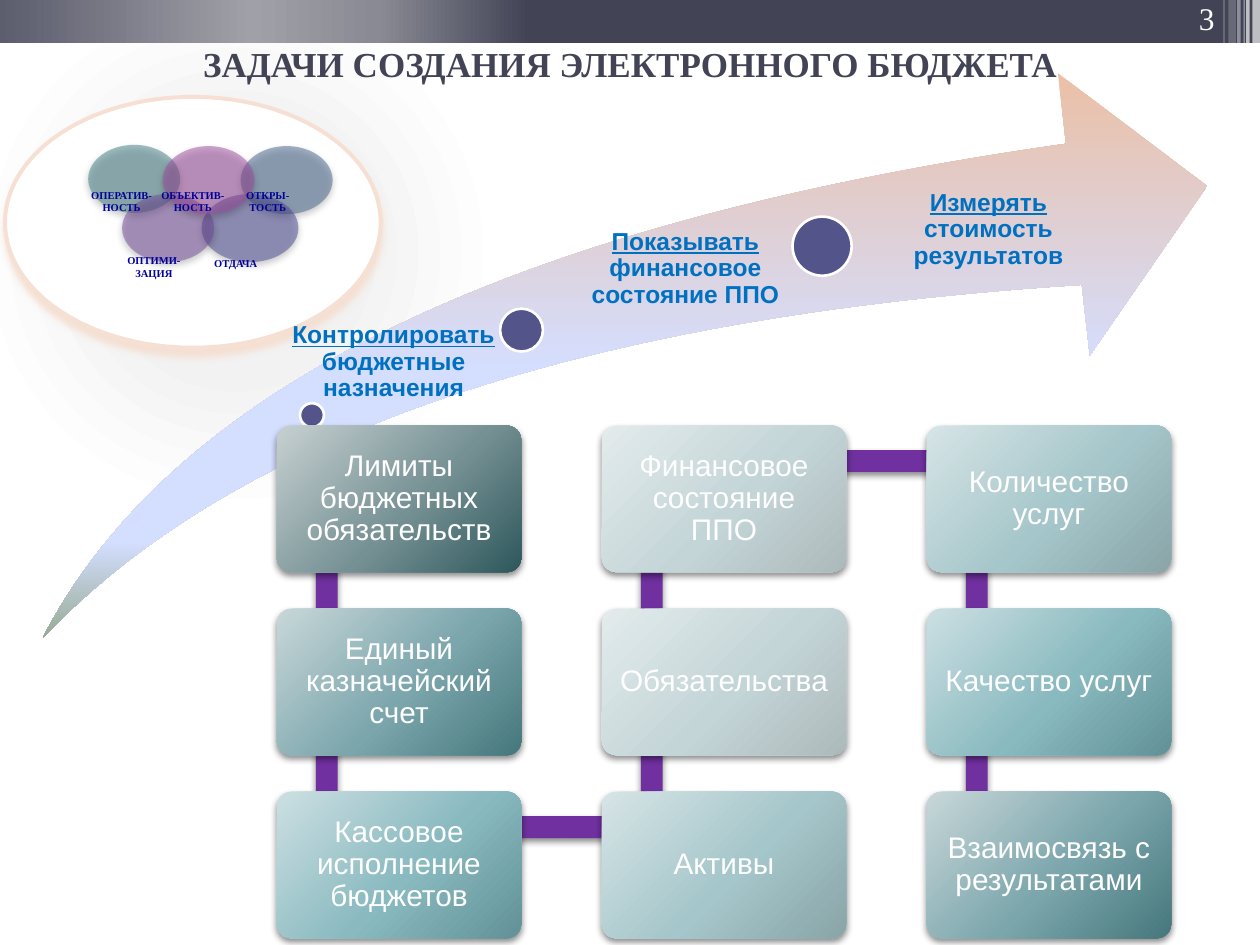
from lxml.etree import SubElement
from pptx import Presentation
from pptx.dml.color import RGBColor
from pptx.enum.shapes import MSO_SHAPE
from pptx.enum.text import MSO_ANCHOR, PP_ALIGN
from pptx.oxml.ns import qn
from pptx.util import Pt

rgb = RGBColor.from_string
DARK, WHITE, INDIGO, PURPLE = "424456", "FFFFFF", "53548A", "7030A0"
SERIF, SANS = "Times New Roman", "Arial"

presentation = Presentation()
presentation.slide_width, presentation.slide_height = Pt(720), Pt(540)
slide = presentation.slides.add_slide(presentation.slide_layouts[6])


def add_figure(kind, box, fill, alpha=100, line=None, shadow=None, angle=0):
    """Fill is a hex colour or a list of (percent, hex) gradient stops."""
    figure = slide.shapes.add_shape(kind, *map(Pt, box))
    figure.shadow.inherit = False
    properties = figure._element.spPr
    if isinstance(fill, str):
        figure.fill.solid()
        figure.fill.fore_color.rgb = rgb(fill)
        if alpha < 100:
            color = properties.find(".//" + qn("a:srgbClr"))
            SubElement(color, qn("a:alpha"), val=str(alpha * 1000))
    else:
        figure.fill.gradient()
        figure.fill.gradient_angle = angle
        stops = properties.find(".//" + qn("a:gsLst"))
        for stop in list(stops):
            stops.remove(stop)
        for percent, color in fill:
            stop = SubElement(stops, qn("a:gs"), pos=str(percent * 1000))
            SubElement(stop, qn("a:srgbClr"), val=color)
    if line:
        figure.line.color.rgb = rgb(line[0])
        figure.line.width = Pt(line[1])
    else:
        figure.line.fill.background()
    if shadow:
        color, opacity, blur, distance = shadow
        outer = SubElement(properties.find(qn("a:effectLst")), qn("a:outerShdw"),
                           blurRad=str(Pt(blur)), dist=str(Pt(distance)),
                           dir="5400000", rotWithShape="0")
        tint = SubElement(outer, qn("a:srgbClr"), val=color)
        SubElement(tint, qn("a:alpha"), val=str(opacity * 1000))
    return figure


def write(holder, lines, font, color, align=PP_ALIGN.CENTER, frame=None, spacing=None):
    """Put the lines in the holder, one paragraph each."""
    text = holder.text_frame
    text.word_wrap = True
    for name, value in (frame or {}).items():
        setattr(text, name, value)
    for index, line in enumerate(lines):
        paragraph = text.paragraphs[0] if index == 0 else text.add_paragraph()
        paragraph.alignment = align
        paragraph.line_spacing = spacing
        run = paragraph.add_run()
        run.text = line
        for name, value in font.items():
            setattr(run.font, name, value)
        run.font.color.rgb = rgb(color)
    return text


# Soft glow behind the upper left corner
glow = add_figure(MSO_SHAPE.RECTANGLE, (0, 24, 337, 300),
                  [(0, "F0F0F0"), (30, "F2F2F2"), (68, WHITE), (100, WHITE)])
glow_gradient = glow._element.spPr.find(qn("a:gradFill"))
glow_gradient.remove(glow_gradient.find(qn("a:lin")))
glow_path = SubElement(glow_gradient, qn("a:path"), path="circle")
SubElement(glow_path, qn("a:fillToRect"), l="40000", t="40000", r="60000", b="60000")

# Header band, stripes and slide number
add_figure(MSO_SHAPE.RECTANGLE, (0, 0, 720, 24.5),
           [(0, "5C5D6D"), (20, "A0A0A8"), (30, "8A8A94"), (42, DARK), (100, DARK)])
for left, width, height, alpha in [
    (715.7, 4.3, 49, 65), (712.1, 2, 49, 65), (710.6, 0.7, 49, 60),
    (707, 2, 49, 40), (702, 4.3, 46, 20), (699.1, 0.7, 46, 30),
]:
    add_figure(MSO_SHAPE.RECTANGLE, (left, 0, width, height), WHITE, alpha)
number = slide.shapes.add_textbox(Pt(584.6), Pt(0), Pt(116.6), Pt(24.5))
write(number, ["3"], {"size": Pt(18), "name": SERIF}, WHITE, PP_ALIGN.RIGHT,
      {"vertical_anchor": MSO_ANCHOR.BOTTOM})

# Principles: overlapping circles inside an oval
add_figure(MSO_SHAPE.OVAL, (2.9, 55.4, 214.6, 143.3), WHITE,
           line=("F5E0D3", 2.25), shadow=("F5E0D3", 100, 4, 4))
for left, top, width, color in [
    (50.4, 82.8, 52.6, "438086"), (137.5, 83.5, 52.6, "46658D"),
    (115.2, 110.9, 55.4, "4A4894"), (69.8, 110.9, 52.6, "734B9C"),
    (92.9, 83.5, 52.6, "A04DA3"),
]:
    add_figure(MSO_SHAPE.OVAL, (left, top, width, 38.9), color, 50,
               shadow=("000000", 40, 4.1, 2))
for left, top, width, lines in [
    (43.2, 104.4, 52.6, ["ОПЕРАТИВ-", "НОСТЬ"]),
    (130.3, 104.4, 45.4, ["ОТКРЫ-", "ТОСТЬ"]),
    (85, 104.4, 50.4, ["ОБЪЕКТИВ-", "НОСТЬ"]),
    (110.2, 143.3, 49, ["ОТДАЧА"]),
    (59.8, 141.8, 56.2, ["ОПТИМИ-ЗАЦИЯ"]),
]:
    principle = slide.shapes.add_textbox(Pt(left), Pt(top), Pt(width), Pt(17.3))
    write(principle, lines, {"size": Pt(6), "name": SERIF, "bold": True}, "000099")

# Title
title = slide.shapes.add_textbox(Pt(36), Pt(21), Pt(648), Pt(45.4))
write(title, ["ЗАДАЧИ СОЗДАНИЯ ЭЛЕКТРОННОГО БЮДЖЕТА"],
      {"size": Pt(20), "name": SERIF, "bold": True}, DARK)

# Rising arrow with three milestones
arrow = add_figure(MSO_SHAPE.SWOOSH_ARROW, (24.5, 41.8, 665.3, 322.6),
                   [(0, "EBC0A7"), (53, "D4DEFF"), (83, "D4DEFF"), (100, "96AB94")],
                   angle=270)
arrow.adjustments[0] = arrow.adjustments[1] = 0.25
goal_font = {"size": Pt(14), "name": SANS, "bold": True}
for dot, label, inset, verb, rest in [
    ((171.4, 230.4, 13.7), (139.7, 184.3, 163.4), 7.2,
     "Контролировать", "бюджетные назначения"),
    ((285.8, 176.4, 24.5), (298.1, 131, 174.2), 13,
     "Показывать", "финансовое состояние ППО"),
    ((452.9, 123.8, 33.8), (471.6, 108.7, 168.5), 18,
     "Измерять", "стоимость результатов"),
]:
    add_figure(MSO_SHAPE.OVAL, (*dot, dot[2]), INDIGO, line=(WHITE, 1.5))
    goal = slide.shapes.add_textbox(*map(Pt, label), Pt(42))
    margins = {"margin_left": Pt(inset), "margin_right": 0,
               "margin_top": 0, "margin_bottom": 0}
    text = write(goal, [verb], {**goal_font, "underline": True}, "0070C0",
                 frame=margins, spacing=0.9)
    text.paragraphs[0].add_line_break()
    run = text.paragraphs[0].add_run()
    run.text = rest
    for name, value in goal_font.items():
        setattr(run.font, name, value)
    run.font.color.rgb = rgb("0070C0")

# Task grid: links first, then cards on top
GRID_LEFT, GRID_TOP, COLUMN_STEP, ROW_STEP = 158.2, 243.2, 185.7, 104.6
CARD_WIDTH, CARD_HEIGHT, LINK = 139.7, 83.8, 12.5
card_shadow = ("000000", 45, 4, 2)
links = [(GRID_LEFT + column * COLUMN_STEP + 22.3, GRID_TOP + row * ROW_STEP + 20,
          LINK, ROW_STEP) for column in range(3) for row in range(2)]
links += [(GRID_LEFT + column * COLUMN_STEP + 28, GRID_TOP + row * ROW_STEP + 14,
           COLUMN_STEP, LINK) for column, row in [(0, 2), (1, 0)]]
for link in links:
    add_figure(MSO_SHAPE.RECTANGLE, link, PURPLE, shadow=card_shadow)

deep = ("C7D0D1", "769194", "2E585C")
teal = ("C8D7D9", "7BA6AC", "46777C")
aqua = ("CCDFE2", "89BAC0", "629297")
mist = ("D6E4E6", "A5C6CA", "89A5A8")
pale = ("E3EBEC", "C4D5D7", "ADBABC")
columns = [
    [("Лимиты бюджетных обязательств", deep), ("Единый казначейский счет", teal),
     ("Кассовое исполнение бюджетов", aqua)],
    [("Финансовое состояние ППО", pale), ("Обязательства", pale), ("Активы", mist)],
    [("Количество услуг", mist), ("Качество услуг", aqua),
     ("Взаимосвязь с результатами", teal)],
]
card_frame = {"vertical_anchor": MSO_ANCHOR.MIDDLE, "margin_left": Pt(7),
              "margin_right": Pt(7), "margin_top": Pt(7), "margin_bottom": Pt(7)}
for column, tasks in enumerate(columns):
    for row, (task, shades) in enumerate(tasks):
        card = add_figure(
            MSO_SHAPE.ROUNDED_RECTANGLE,
            (GRID_LEFT + column * COLUMN_STEP, GRID_TOP + row * ROW_STEP,
             CARD_WIDTH, CARD_HEIGHT),
            list(zip((0, 55, 100), shades)), shadow=card_shadow, angle=315)
        card.adjustments[0] = 0.1
        write(card, [task], {"size": Pt(17), "name": SANS}, WHITE,
              frame=card_frame, spacing=0.9)

presentation.save("out.pptx")
